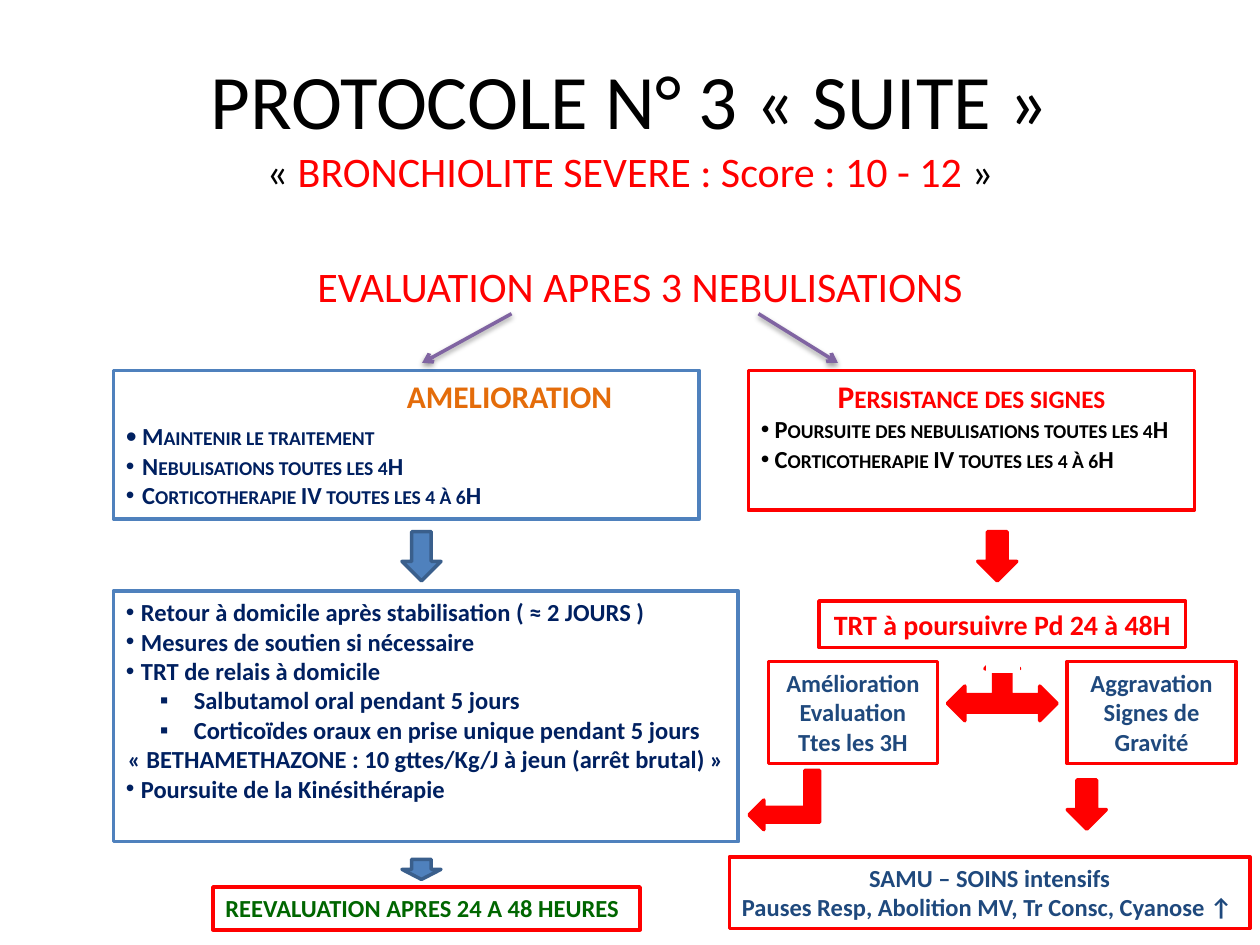
from lxml import etree
from pptx import Presentation
from pptx.dml.color import RGBColor
from pptx.enum import shapes, text
from pptx.oxml import ns
from pptx.util import Inches, Pt

COLORS = {
    "white": "FFFFFF", "black": "000000", "red": "FF0000", "blue": "4F81BD",
    "edge": "3A5F8C", "navy": "002060", "slate": "1F497D", "orange": "E46C0A",
    "green": "006600", "purple": "8064A2",
}
FONT = "Calibri"
KIND = shapes.MSO_SHAPE
ALIGN = {"center": text.PP_ALIGN.CENTER, "left": text.PP_ALIGN.LEFT}

TITLE = [
    [("PROTOCOLE N° 3 « SUITE »", 44, "black")],
    [("« ", 24, "black"), ("BRONCHIOLITE SEVERE : Score : 10 - 12 ", 24, "red"),
     ("»", 24, "black")],
]
EVALUATION = "EVALUATION APRES 3 NEBULISATIONS"

STYLES = {
    "improved": dict(size=18, color="orange", caps=True, margin=2.23),
    "persistent": dict(size=18, color="red", align="center", caps=True),
    "lead care": dict(size=14, color="navy", bullet="•", caps=True, margin=0.13,
                      hang=0.13, before=4, bullet_scale=128),
    "care": dict(size=14, color="navy", bullet="•", caps=True, margin=0.13, hang=0.13),
    "pursue": dict(size=14, color="black", bullet="•", caps=True, margin=0.11, hang=0.11),
    "home": dict(size=14, color="navy", bullet="•", margin=0.12, hang=0.12),
    "drug": dict(size=14, color="navy", bullet="▪", margin=0.54, hang=0.27),
    "dose": dict(size=14, color="navy", align="center"),
    "duration": dict(size=16, color="red", align="center"),
    "outcome": dict(size=14, color="slate", align="center"),
    "signs": dict(size=14, color="slate"),
    "review": dict(size=14, color="green"),
}

BOXES = [
    ((0.9, 2.94, 4.65, 1.18), "blue", [
        ("improved", "AMELIORATION"),
        ("lead care", "Maintenir le traitement"),
        ("care", "Nebulisations toutes les 4H"),
        ("care", "Corticotherapie IV toutes les 4 à 6H")]),
    ((5.94, 2.94, 3.54, 1.11), "red", [
        ("persistent", "Persistance des signes"),
        ("pursue", "Poursuite des nebulisations toutes les 4H"),
        ("pursue", "Corticotherapie IV toutes les 4 à 6H")]),
    ((0.9, 4.69, 4.96, 1.99), "blue", [
        ("home", "Retour à domicile après stabilisation ( ≈ 2 JOURS )"),
        ("home", "Mesures de soutien si nécessaire"),
        ("home", "TRT de relais à domicile"),
        ("drug", "Salbutamol oral pendant 5 jours"),
        ("drug", "Corticoïdes oraux en prise unique pendant 5 jours"),
        ("dose", "« BETHAMETHAZONE : 10 gttes/Kg/J à jeun (arrêt brutal) »"),
        ("home", "Poursuite de la Kinésithérapie")]),
    ((6.5, 4.77, 2.91, 0.37), "red", [("duration", "TRT à poursuivre Pd 24 à 48H")]),
    ((6.1, 5.25, 1.34, 0.81), "red", [
        ("outcome", "Amélioration"), ("outcome", "Evaluation"),
        ("outcome", "Ttes les 3H")]),
    ((8.47, 5.25, 1.34, 0.81), "red", [
        ("outcome", "Aggravation"), ("outcome", "Signes de Gravité")]),
    ((5.79, 6.8, 4.13, 0.57), "red", [
        ("outcome", "SAMU – SOINS intensifs"),
        ("signs", "Pauses Resp, Abolition MV, Tr Consc, Cyanose ↑")]),
    ((1.69, 7.04, 3.39, 0.34), "red", [("review", "REEVALUATION APRES 24 A 48 HEURES")]),
]

BLOCK_ARROWS = [
    (KIND.DOWN_ARROW, (3.19, 4.22, 0.31, 0.39), "blue", "edge"),
    (KIND.DOWN_ARROW, (3.19, 6.82, 0.31, 0.16), "blue", "edge"),
    (KIND.DOWN_ARROW, (7.76, 4.22, 0.31, 0.39), "red", "red"),
    (KIND.DOWN_ARROW, (8.47, 6.19, 0.31, 0.39), "red", "red"),
    (KIND.LEFT_RIGHT_UP_ARROW, (7.52, 5.17, 0.87, 0.55), "red", "red"),
    (KIND.RECTANGLE, (7.84, 5.17, 0.24, 0.16), "white", "white"),
]
RETURN_ARROW = (KIND.BENT_UP_ARROW, (5.99, 6.07, 0.47, 0.56), "red", "red")
BRANCHES = [((4.06, 2.49), (3.35, 2.88)), ((6.02, 2.49), (6.65, 2.88))]


def rgb(color):
    return RGBColor.from_string(COLORS[color])


def add_xml(parent, tag, **attributes):
    return etree.SubElement(parent, ns.qn(tag), attributes)


def style_run(run, size, color, bold=False, caps=False):
    run.font.name, run.font.size, run.font.bold = FONT, Pt(size), bold
    run.font.color.rgb = rgb(color)
    if caps:
        run.font._element.set("cap", "small")


def style_paragraph(paragraph, size, color, align="left", caps=False, bullet=None,
                    margin=0, hang=0, before=0, bullet_scale=100):
    paragraph.alignment = ALIGN[align]
    properties = paragraph._p.get_or_add_pPr()
    properties.set("marL", str(Inches(margin)))
    properties.set("indent", str(-Inches(hang)))
    if bullet:
        add_xml(properties, "a:buSzPct", val=str(bullet_scale * 1000))
        add_xml(properties, "a:buFont", typeface="Arial")
        add_xml(properties, "a:buChar", char=bullet)
    if before:
        paragraph.space_before = Pt(before)
    for run in paragraph.runs:
        style_run(run, size, color, True, caps)


def add_figure(slide, kind, place, fill, line):
    figure = slide.shapes.add_shape(kind, *map(Inches, place))
    figure.shadow.inherit = False
    figure.fill.solid()
    figure.fill.fore_color.rgb = rgb(fill)
    figure.line.color.rgb = rgb(line)
    figure.line.width = Pt(2)
    return figure


def add_box(slide, place, line, content):
    frame = add_figure(slide, KIND.RECTANGLE, place, "white", line).text_frame
    frame.word_wrap = True
    frame.vertical_anchor = text.MSO_ANCHOR.TOP
    frame.text = "\n".join(words for _, words in content)
    for paragraph, (style, _) in zip(frame.paragraphs, content):
        style_paragraph(paragraph, **STYLES[style])


def add_heading(slide, place, lines):
    frame = slide.shapes.add_textbox(*map(Inches, place)).text_frame
    frame.word_wrap = True
    frame.vertical_anchor = text.MSO_ANCHOR.MIDDLE
    heading = frame.paragraphs[0]
    heading.alignment = ALIGN["center"]
    for number, line in enumerate(lines):
        if number:
            heading.add_line_break()
        for words, size, color in line:
            run = heading.add_run()
            run.text = words
            style_run(run, size, color)


def add_branch(slide, start, end):
    branch = slide.shapes.add_connector(
        shapes.MSO_CONNECTOR.STRAIGHT, *map(Inches, start + end))
    branch.line.color.rgb = rgb("purple")
    branch.line.width = Pt(2)
    add_xml(branch.line._get_or_add_ln(), "a:tailEnd", type="arrow")
    effects = add_xml(branch._element.spPr, "a:effectLst")
    shadow = add_xml(effects, "a:outerShdw", blurRad=str(Pt(3.1)), dist=str(Pt(1.6)),
                     dir="5400000", rotWithShape="0")
    shade = add_xml(shadow, "a:srgbClr", val=COLORS["black"])
    add_xml(shade, "a:alpha", val="38000")


def main():
    deck = Presentation()
    deck.slide_width, deck.slide_height = Inches(10), Inches(7.5)
    slide = deck.slides.add_slide(deck.slide_layouts[6])
    add_heading(slide, (0.83, 2.02, 8.5, 0.5), [[(EVALUATION, 24, "red")]])
    add_heading(slide, (0.75, 0.36, 8.5, 1.25), TITLE)
    for box in BOXES:
        add_box(slide, *box)
    for arrow in BLOCK_ARROWS:
        add_figure(slide, *arrow)
    back_home = add_figure(slide, *RETURN_ARROW)
    back_home.rotation = 270
    back_home._element.spPr.xfrm.set("flipH", "1")
    for start, end in BRANCHES:
        add_branch(slide, start, end)
    deck.save("out.pptx")


if __name__ == "__main__":
    main()
